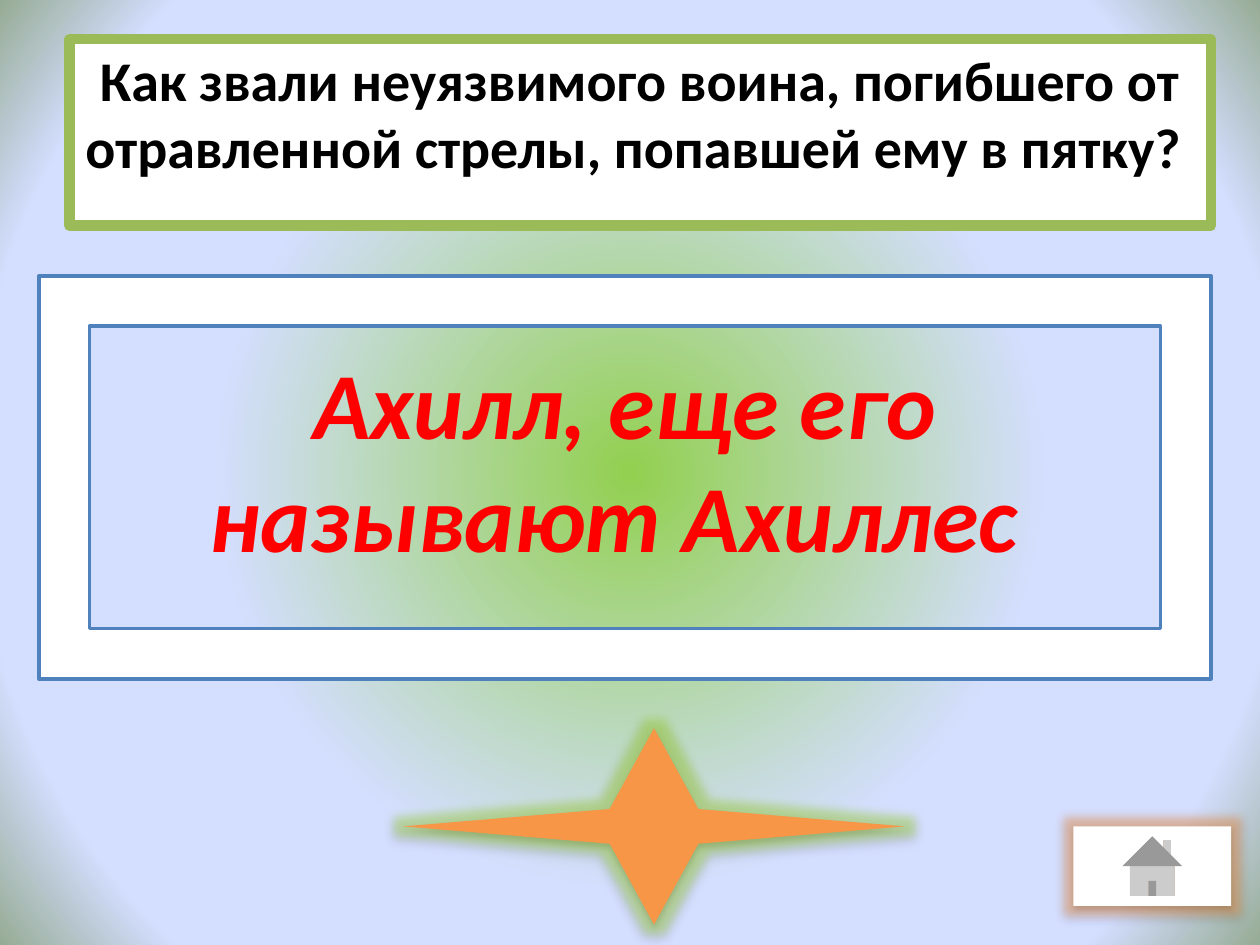
from pptx import Presentation
from pptx import util as u
from pptx.dml.color import RGBColor
from pptx.enum import shapes, text
from pptx.oxml import parse_xml
from pptx.oxml.ns import nsdecls, qn

SHAPE = shapes.MSO_SHAPE
ANCHOR = text.MSO_ANCHOR


def color(value):
    """Turn a hex string into a colour."""
    return RGBColor.from_string(value)


def set_background(slide, stops):
    """Fill the slide with a circular gradient of (percent, colour) stops."""
    stop_xml = "".join(
        f'<a:gs pos="{percent * 1000}"><a:srgbClr val="{value}"/></a:gs>'
        for percent, value in stops
    )
    background = parse_xml(
        f'<p:bg {nsdecls("p", "a")}><p:bgPr><a:gradFill rotWithShape="1">'
        f'<a:gsLst>{stop_xml}</a:gsLst><a:path path="circle">'
        '<a:fillToRect l="50000" t="50000" r="50000" b="50000"/></a:path>'
        '</a:gradFill><a:effectLst/></p:bgPr></p:bg>'
    )
    slide.element.find(qn("p:cSld")).insert(0, background)


def add_shape(slide, kind, box, fill, line=None, width=0):
    """Add a filled preset shape at a box given in centimetres."""
    shape = slide.shapes.add_shape(kind, *(u.Cm(length) for length in box))
    shape.fill.solid()
    shape.fill.fore_color.rgb = color(fill)
    shape.shadow.inherit = False
    if line:
        shape.line.color.rgb = color(line)
        shape.line.width = u.Pt(width)
    else:
        shape.line.fill.background()
    return shape


def add_glow(shape, value):
    """Give a shape a soft coloured glow and a drop shadow."""
    properties = shape._element.spPr
    properties.remove(properties.find(qn("a:effectLst")))
    properties.append(parse_xml(
        f'<a:effectLst {nsdecls("a")}>'
        f'<a:glow rad="{u.Pt(11)}"><a:srgbClr val="{value}">'
        '<a:satMod val="175000"/><a:alpha val="40000"/></a:srgbClr></a:glow>'
        f'<a:outerShdw blurRad="{u.Pt(3.5)}" dist="{u.Pt(2.2)}" dir="5400000" rotWithShape="0">'
        '<a:srgbClr val="000000"><a:alpha val="32000"/></a:srgbClr>'
        '</a:outerShdw></a:effectLst>'
    ))


def write_text(shape, wording, size, value, anchor, italic=None):
    """Write one bold centred paragraph into a shape."""
    frame = shape.text_frame
    frame.word_wrap = True
    frame.vertical_anchor = anchor
    paragraph = frame.paragraphs[0]
    paragraph.text = wording
    paragraph.alignment = text.PP_ALIGN.CENTER
    font = paragraph.font
    font.name, font.size = "Calibri", u.Pt(size)
    font.bold, font.italic = True, italic
    font.color.rgb = color(value)


def main():
    """Build the quiz slide and save it."""
    presentation = Presentation()
    presentation.slide_width, presentation.slide_height = u.Cm(25.4), u.Cm(19.05)
    slide = presentation.slides.add_slide(presentation.slide_layouts[6])
    set_background(slide, [(0, "92D050"), (53, "D4DEFF"), (83, "D4DEFF"), (100, "96AB94")])

    question = add_shape(slide, SHAPE.RECTANGLE, (1.4, 0.79, 23.01, 3.76), "FFFFFF", "9BBB59", 6)
    write_text(question, "Как звали неуязвимого воина, погибшего от отравленной стрелы, попавшей ему в пятку? ",
               32, "000000", ANCHOR.TOP)

    star = add_shape(slide, SHAPE.STAR_4_POINT, (8.13, 14.68, 10.11, 3.96), "F79646")
    add_glow(star, "9BBB59")

    answer = add_shape(slide, SHAPE.FRAME, (0.79, 5.56, 23.62, 8.13), "FFFFFF", "4F81BD", 2)
    write_text(answer, "Ахилл, еще его называют Ахиллес ", 54, "FF0000", ANCHOR.MIDDLE, True)
    answer.text_frame.margin_bottom = u.Cm(0.89)

    home = add_shape(slide, SHAPE.ACTION_BUTTON_HOME, (21.64, 16.66, 3.18, 1.6), "FFFFFF")
    add_glow(home, "F79646")

    presentation.save("out.pptx")


if __name__ == "__main__":
    main()
